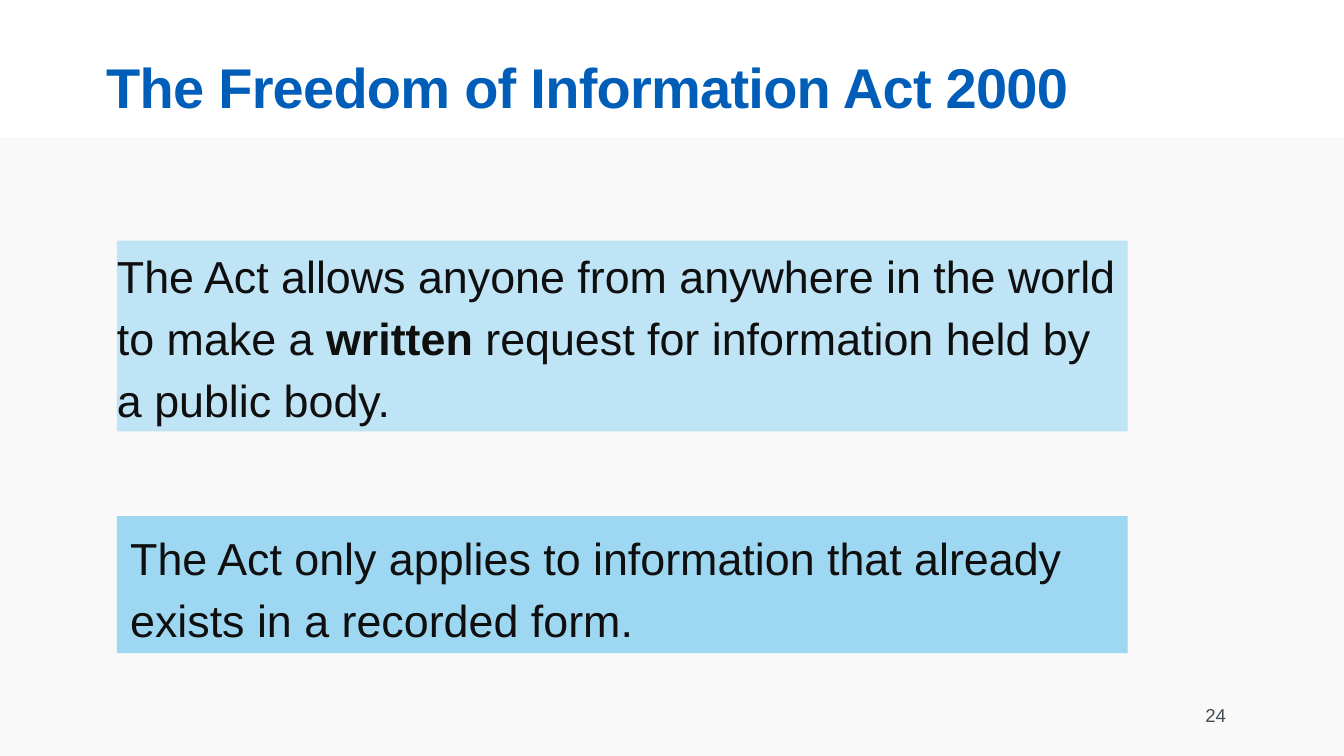
from pptx import Presentation, util as u
from pptx.dml.color import RGBColor
from pptx.enum import shapes, text

prs = Presentation()
prs.slide_width = u.Inches(10)
prs.slide_height = prs.slide_width * 9 // 16
s = prs.slides.add_slide(prs.slide_layouts[5])
W, H = prs.slide_width, prs.slide_height
LEFT, WIDTH = u.Inches(0.87), u.Inches(7.52)


def rgb(value):
    return RGBColor.from_string(value)


def add_run(p, words, size, color, bold=False):
    r = p.add_run()
    r.text = words
    for name, value in {"name": "Arial", "size": u.Pt(size), "bold": bold}.items():
        setattr(r.font, name, value)
    r.font.color.rgb = rgb(color)
    return r


title = s.shapes.title
title.left, title.top, title.width, title.height = [u.Inches(v) for v in (0.79, 0.39, 8.35, 0.58)]
tf = title.text_frame
no_inset = dict.fromkeys(("margin_left", "margin_top", "margin_right", "margin_bottom"), 0)
for name, value in {**no_inset, "vertical_anchor": text.MSO_ANCHOR.TOP, "word_wrap": True}.items():
    setattr(tf, name, value)
p = tf.paragraphs[0]
p.alignment = text.PP_ALIGN.LEFT
r = add_run(p, "The Freedom of Information Act 2000", 30, "005EB8", True)
r.font._element.set("spc", "-40")

band_top = u.Inches(1.02)
panels = [
    (0, band_top, W, H - band_top, "F9F9F9", {}, []),
    (LEFT, u.Inches(1.79), WIDTH, u.Inches(1.42), "BFE4F6", no_inset, [
        ("The Act allows anyone from anywhere in the world to make a ", False),
        ("written", True),
        (" request for information held by a public body.", False),
    ]),
    (LEFT, u.Inches(3.84), WIDTH, u.Inches(1.02), "9ED7F1", {}, [
        ("The Act only applies to information that already exists in a recorded form.", False),
    ]),
]
for x, y, w, h, fill, insets, runs in panels:
    sp = s.shapes.add_shape(shapes.MSO_SHAPE.RECTANGLE, x, y, w, h)
    sp.shadow.inherit = False
    sp.fill.solid()
    sp.fill.fore_color.rgb = rgb(fill)
    sp.line.fill.background()
    tf = sp.text_frame
    for name, value in {**insets, "vertical_anchor": text.MSO_ANCHOR.TOP, "word_wrap": True}.items():
        setattr(tf, name, value)
    p = tf.paragraphs[0]
    p.alignment = text.PP_ALIGN.LEFT
    p.line_spacing = 1.15
    for words, bold in runs:
        add_run(p, words, 24, "0F0F0F", bold)

sp = s.shapes.add_textbox(*[u.Inches(v) for v in (6.89, 5.17, 2.33, 0.3)])
tf = sp.text_frame
tf.word_wrap = True
tf.vertical_anchor = text.MSO_ANCHOR.MIDDLE
p = tf.paragraphs[0]
p.alignment = text.PP_ALIGN.RIGHT
add_run(p, "24", 10, "424D58")

prs.save("out.pptx")
